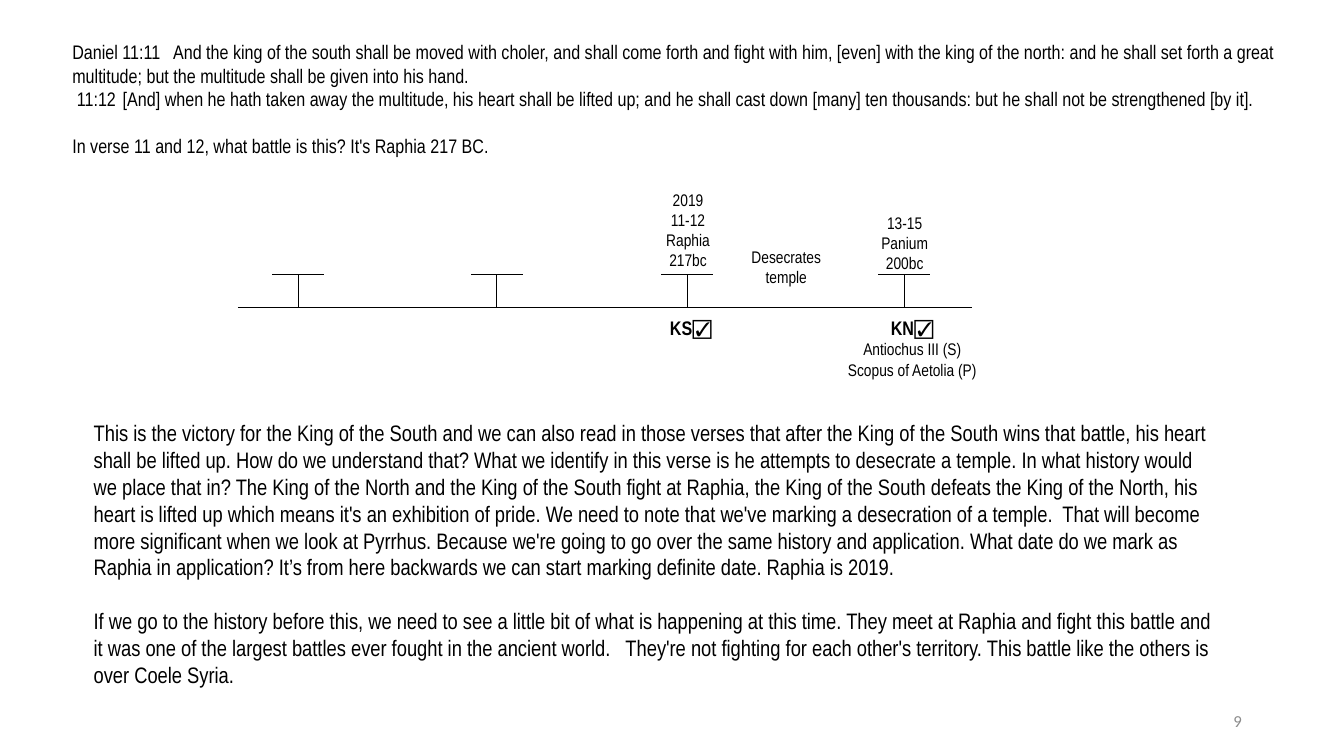
import pptx
import pptx.util
import pptx.dml.color
import pptx.enum.shapes
import pptx.enum.text
import pptx.oxml.ns
import lxml.etree

Pt = pptx.util.Pt
ALIGN = pptx.enum.text.PP_ALIGN
ANCHOR = pptx.enum.text.MSO_ANCHOR
BLACK = pptx.dml.color.RGBColor(0x00, 0x00, 0x00)
GREY = pptx.dml.color.RGBColor(0x8C, 0x8C, 0x8C)
NARROW = "Arial Narrow"

prs = pptx.Presentation()
prs.slide_width, prs.slide_height = Pt(960), Pt(540)
s = prs.slides.add_slide(prs.slide_layouts[6])


def add_text(box, paragraphs, align=ALIGN.LEFT, inset=None, anchor=ANCHOR.TOP, color=BLACK):
    """Each paragraph is (space before, runs); each run is (text, font values)."""
    sp = s.shapes.add_textbox(*[Pt(v) for v in box])
    tf = sp.text_frame
    tf.word_wrap = True
    tf.vertical_anchor = anchor
    if inset is not None:
        for side in ("left", "top", "right", "bottom"):
            setattr(tf, "margin_" + side, Pt(inset))
    for i, (before, runs) in enumerate(paragraphs):
        p = tf.add_paragraph() if i else tf.paragraphs[0]
        p.alignment = align
        p.space_before = Pt(before)
        for text, font in runs:
            r = p.add_run()
            r.text = text
            r.font.color.rgb = color
            for name, value in font.items():
                setattr(r.font, name, value)


def add_line(x1, y1, x2, y2):
    c = s.shapes.add_connector(pptx.enum.shapes.MSO_CONNECTOR.STRAIGHT, Pt(x1), Pt(y1), Pt(x2), Pt(y2))
    c.line.color.rgb = BLACK
    c.line.width = Pt(0.75)
    lxml.etree.SubElement(c._element.spPr, pptx.oxml.ns.qn("a:effectLst"))


# Font values
verse = {"size": Pt(14), "name": NARROW}
body = {"size": Pt(16), "name": NARROW}
label = {"size": Pt(12), "name": NARROW}
king = {"size": Pt(14), "name": NARROW, "bold": True}
tick_box = {"size": Pt(14), "name": "Arial", "bold": True}

# Verses and question
add_text((44.6, 25.2, 893.5, 123.8), [
    (0, [("Daniel 11:11\tAnd the king of the south shall be moved with choler, and shall come forth "
          "and fight with him, [even] with the king of the north: and he shall set forth a great "
          "multitude; but the multitude shall be given into his hand.", verse)]),
    (0, [(" 11:12\t[And] when he hath taken away the multitude, his heart shall be lifted up; and he "
          "shall cast down [many] ten thousands: but he shall not be strengthened [by it].", verse)]),
    (16.8, [("In verse 11 and 12, what battle is this? It's Raphia 217 BC.", verse)]),
])

# Timeline: base line and four capped marks
BASE_Y, CAP_Y, CAP_HALF = 219.4, 195.8, 18.5
add_line(170, BASE_Y, 694, BASE_Y)
for x in (213.1, 355, 491, 645.8):
    add_line(x, CAP_Y, x, BASE_Y)
    add_line(x - CAP_HALF, CAP_Y, x + CAP_HALF, CAP_Y)

# Timeline labels
for box, lines in [
    ((466.6, 132.5, 49.7, 64.8), ["2019", "11-12", "Raphia", "217bc"]),
    ((529.9, 173.5, 63.4, 38.2), ["Desecrates", "temple"]),
    ((609.1, 149, 74.2, 48.2), ["13-15", "Panium", "200bc"]),
]:
    add_text(box, [(0, [(text, label)]) for text in lines], ALIGN.CENTER, 2.9)

# Kings below the timeline
for box, name, leaders in [
    ((439.9, 222.5, 107.3, 58.3), "KS", []),
    ((601.9, 222.5, 99.4, 58.3), "KN", ["Antiochus III (S)", "Scopus of Aetolia (P)"]),
]:
    add_text(box, [(0, [(name, king), ("☑", tick_box)])] + [(0, [(text, label)]) for text in leaders],
             ALIGN.CENTER, 2.9)

# Commentary
add_text((59.8, 295.9, 817.2, 200.9), [
    (0, [("This is the victory for the King of the South and we can also read in those verses that "
          "after the King of the South wins that battle, his heart shall be lifted up. How do we "
          "understand that? What we identify in this verse is he attempts to desecrate a temple. In "
          "what history would we place that in? The King of the North and the King of the South fight "
          "at Raphia, the King of the South defeats the King of the North, his heart is lifted up "
          "which means it's an exhibition of pride. We need to note that we've marking a desecration "
          "of a temple.  That will become more significant when we look at Pyrrhus. Because we're "
          "going to go over the same history and application. What date do we mark as Raphia in "
          "application? It’s from here backwards we can start marking definite date. Raphia is 2019.",
          body)]),
    (19.2, [("If we go to the history before this, we need to see a little bit of what is happening at "
             "this time. They meet at Raphia and fight this battle and it was one of the largest "
             "battles ever fought in the ancient world.   They're not fighting for each other's "
             "territory. This battle like the others is over Coele Syria.", body)]),
])

# Slide number
add_text((678.2, 500.4, 216, 28.8), [(0, [("9", {"size": Pt(12), "name": "Calibri"})])],
         ALIGN.RIGHT, anchor=ANCHOR.MIDDLE, color=GREY)

prs.save("out.pptx")
